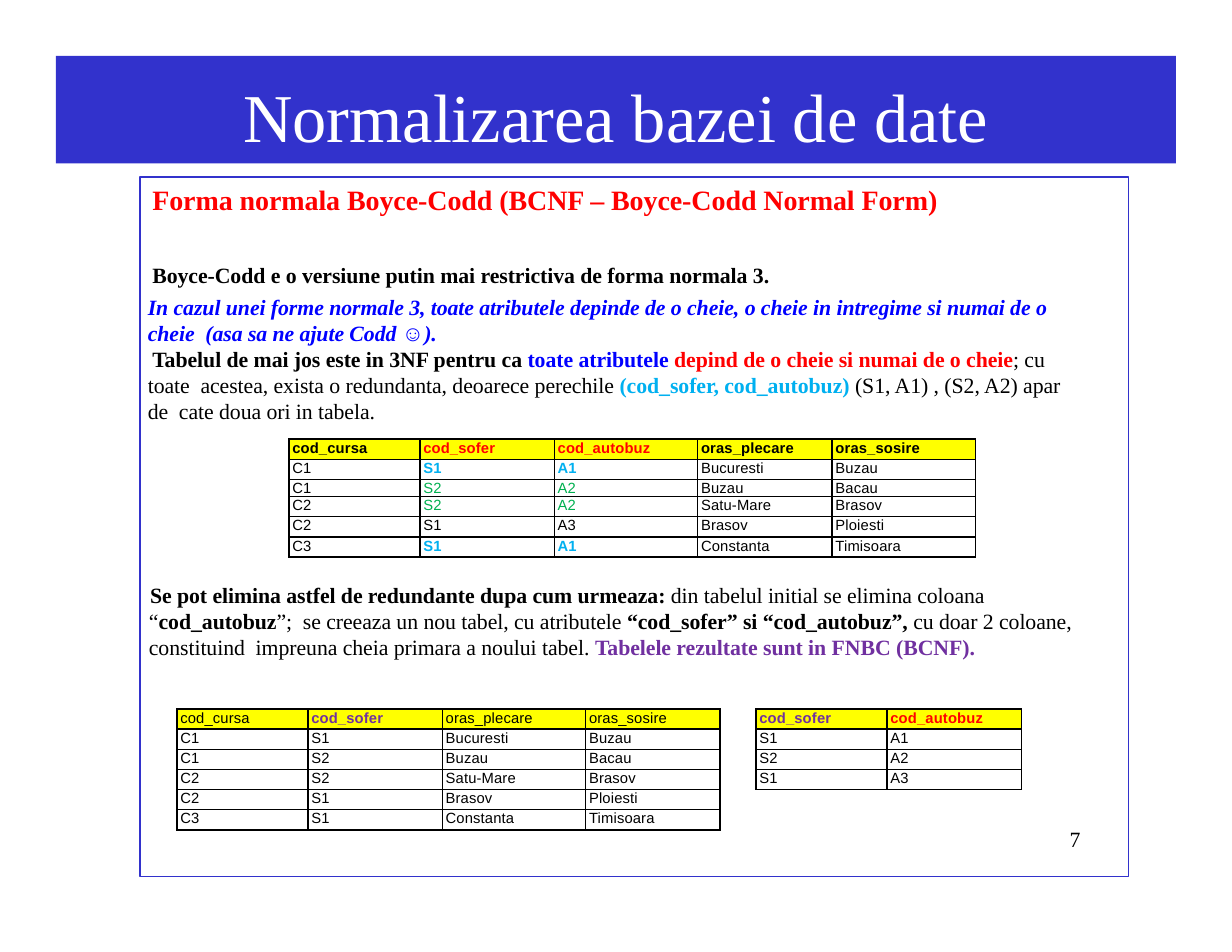
from dataclasses import dataclass
from typing import Optional

from lxml.etree import SubElement
from pptx import Presentation
from pptx.dml.color import RGBColor
from pptx.enum.shapes import MSO_SHAPE
from pptx.enum.text import PP_ALIGN
from pptx.oxml.ns import qn
from pptx.util import Inches, Pt

COLORS = {
    "black": "000000", "white": "FFFFFF", "banner": "3232CC", "yellow": "FFFF00",
    "red": "FF0000", "blue": "0000FF", "cyan": "00B0F0", "green": "00B050",
    "purple": "7030A0",
}
SERIF, SANS = "Times New Roman", "Arial"
COLUMN_WIDTHS = {"cod_cursa": 1.17, "cod_sofer": 1.2, "cod_autobuz": 1.28,
                 "oras_plecare": 1.2, "oras_sosire": 1.28}
ROW_HEIGHT = 0.18


@dataclass(frozen=True)
class Run:
    text: str
    color: str = "black"
    bold: bool = False
    italic: bool = False
    size: float = 14
    font: str = SERIF
    tracking: float = -0.05


@dataclass(frozen=True)
class Para:
    runs: tuple[Run, ...]
    before: float = 0
    spacing: Optional[float] = None
    margin: float = 0
    indent: float = 0
    align: PP_ALIGN = PP_ALIGN.LEFT


@dataclass(frozen=True)
class Cell:
    text: str
    color: str = "black"
    bold: bool = False


@dataclass(frozen=True)
class Grid:
    left: float
    top: float
    widths: tuple[float, ...]
    heights: tuple[float, ...]
    rows: tuple[tuple[Cell, ...], ...]


def rgb(name: str) -> RGBColor:
    return RGBColor.from_string(COLORS[name])


def write_paragraph(paragraph, para: Para) -> None:
    paragraph.alignment = para.align
    paragraph.space_before = Pt(para.before)
    if para.spacing:
        paragraph.line_spacing = Pt(para.spacing)
    properties = paragraph._p.get_or_add_pPr()
    properties.set("marL", str(Inches(para.margin)))
    properties.set("indent", str(Inches(para.indent)))
    for part in para.runs:
        run = paragraph.add_run()
        run.text = part.text
        font = run.font
        font.name, font.size = part.font, Pt(part.size)
        font.bold, font.italic = part.bold, part.italic
        font.color.rgb = rgb(part.color)
        font._element.set("spc", str(round(part.tracking * 100)))


def write_text(frame, paras: tuple[Para, ...], top_inset: float = 0) -> None:
    frame.word_wrap = True
    frame.margin_left = frame.margin_right = frame.margin_bottom = 0
    frame.margin_top = Inches(top_inset)
    for number, para in enumerate(paras):
        paragraph = frame.add_paragraph() if number else frame.paragraphs[0]
        write_paragraph(paragraph, para)


def add_text(slide, box: tuple[float, ...], paras: tuple[Para, ...], top_inset: float = 0) -> None:
    write_text(slide.shapes.add_textbox(*map(Inches, box)).text_frame, paras, top_inset)


def add_rectangle(slide, box: tuple[float, ...]):
    rectangle = slide.shapes.add_shape(MSO_SHAPE.RECTANGLE, *map(Inches, box))
    rectangle.shadow.inherit = False
    return rectangle


def add_borders(cell) -> None:
    """Put a 1 pt black line on all four sides, ahead of the cell's fill."""
    properties = cell._tc.get_or_add_tcPr()
    for position, side in enumerate(("lnL", "lnR", "lnT", "lnB")):
        line = SubElement(properties, qn(f"a:{side}"), w=str(Pt(1)))
        fill = SubElement(line, qn("a:solidFill"))
        SubElement(fill, qn("a:srgbClr"), val=COLORS["black"])
        properties.insert(position, line)


def add_grid(slide, grid: Grid) -> None:
    table = slide.shapes.add_table(
        len(grid.rows), len(grid.widths), Inches(grid.left), Inches(grid.top),
        Inches(sum(grid.widths)), Inches(sum(grid.heights))).table
    table.first_row = table.horz_banding = False
    for column, width in zip(table.columns, grid.widths):
        column.width = Inches(width)
    for number, (row, height, contents) in enumerate(zip(table.rows, grid.heights, grid.rows)):
        row.height = Inches(height)
        for cell, content in zip(row.cells, contents):
            cell.margin_left = cell.margin_right = cell.margin_top = cell.margin_bottom = 0
            if number == 0:
                cell.fill.solid()
                cell.fill.fore_color.rgb = rgb("yellow")
            else:
                cell.fill.background()
            add_borders(cell)
            run = Run(content.text, content.color, content.bold,
                      size=9.5, font=SANS, tracking=0.1)
            write_paragraph(cell.text_frame.paragraphs[0],
                            Para((run,), spacing=11.1, margin=0.03))


def plain(*texts: str) -> tuple[Cell, ...]:
    return tuple(Cell(text) for text in texts)


TRIPS = (
    ("C1", "S1", "A1", "Bucuresti", "Buzau"),
    ("C1", "S2", "A2", "Buzau", "Bacau"),
    ("C2", "S2", "A2", "Satu-Mare", "Brasov"),
    ("C2", "S1", "A3", "Brasov", "Ploiesti"),
    ("C3", "S1", "A1", "Constanta", "Timisoara"),
)
REPEATED_PAIRS = {("S1", "A1"): ("cyan", True), ("S2", "A2"): ("green", False)}


def trip_row(trip: tuple[str, ...]) -> tuple[Cell, ...]:
    """Colour the driver and bus of a trip when the pair occurs twice."""
    course, driver, bus, *cities = trip
    style = REPEATED_PAIRS.get((driver, bus), ("black", False))
    return (Cell(course), Cell(driver, *style), Cell(bus, *style), *plain(*cities))


WIDTHS = tuple(COLUMN_WIDTHS.values())
BUS_HEADER = Cell("cod_autobuz", "red", True)
KEY_HEADER = Cell("cod_sofer", "purple", True)
INITIAL = Grid(2.58, 3.92, WIDTHS, tuple(0.15 if n == 2 else ROW_HEIGHT for n in range(6)), (
    (Cell("cod_cursa", bold=True), Cell("cod_sofer", "red", True), BUS_HEADER,
     Cell("oras_plecare", bold=True), Cell("oras_sosire", bold=True)),
    *map(trip_row, TRIPS)))
WITHOUT_BUS = Grid(1.58, 6.33, (1.17, 1.2, 1.28, 1.2), (ROW_HEIGHT,) * 6, (
    (Cell("cod_cursa"), KEY_HEADER, *plain("oras_plecare", "oras_sosire")),
    *(plain(*trip[:2], *trip[3:]) for trip in TRIPS)))
DRIVER_BUS = Grid(6.75, 6.33, (1.17, 1.2), (ROW_HEIGHT,) * 4, (
    (KEY_HEADER, BUS_HEADER),
    *(plain(*pair) for pair in dict.fromkeys(trip[1:3] for trip in TRIPS))))

TITLE = Para((Run("Normalizarea bazei de date", "white", size=44),),
             before=6.6, align=PP_ALIGN.CENTER)
EXPLANATION = (
    Para((Run("Forma normala Boyce-Codd (BCNF – Boyce-Codd Normal Form)", "red", True, size=18),),
         before=0.9, margin=0.04),
    Para((Run("Boyce-Codd e o versiune putin mai restrictiva de forma normala 3.", bold=True),),
         before=29, margin=0.04),
    Para((Run("In cazul unei forme normale 3, toate atributele depinde de o cheie, o cheie in "
              "intregime si numai de o cheie  (asa sa ne ajute Codd ", "blue", True, True),
          Run("☺", "blue", True, True, font=SANS, tracking=-0.9),
          Run(").", "blue", True, True)), before=4, spacing=16.7),
    Para((Run("Tabelul de mai jos este in 3NF pentru ca ", bold=True),
          Run("toate atributele ", "blue", True),
          Run("depind de o cheie si numai de o cheie", "red", True),
          Run("; cu toate  acestea, exista o redundanta, deoarece perechile "),
          Run("(cod_sofer, cod_autobuz) ", "cyan", True),
          Run("(S1, A1) , (S2, A2) apar de  cate doua ori in tabela.")), indent=0.04),
)
SOLUTION = Para((
    Run("Se pot elimina astfel de redundante dupa cum urmeaza: ", bold=True),
    Run("din tabelul initial se elimina coloana “"),
    Run("cod_autobuz", bold=True),
    Run("”;  se creeaza un nou tabel, cu atributele "),
    Run("“cod_sofer” si “cod_autobuz”, ", bold=True),
    Run("cu doar 2 coloane, constituind  impreuna cheia primara a noului tabel. "),
    Run("Tabelele rezultate sunt in FNBC (BCNF).", "purple", True)), before=1.1, indent=0.01)
PAGE_NUMBER = Para((Run("7", tracking=0),), spacing=14.4, margin=0.04)


def main() -> None:
    presentation = Presentation()
    presentation.slide_width, presentation.slide_height = Inches(11), Inches(8.5)
    slide = presentation.slides.add_slide(presentation.slide_layouts[6])

    banner = add_rectangle(slide, (0.5, 0.5, 10, 0.96))
    banner.fill.solid()
    banner.fill.fore_color.rgb = rgb("banner")
    banner.line.fill.background()
    write_text(banner.text_frame, (TITLE,), 0.09)

    border = add_rectangle(slide, (1.25, 1.58, 8.83, 6.25))
    border.fill.background()
    border.line.color.rgb = rgb("banner")
    border.line.width = Pt(0.72)

    add_text(slide, (1.32, 1.62, 8.27, 2.18), EXPLANATION, 0.01)
    add_text(slide, (9.51, 7.41, 0.18, 0.22), (PAGE_NUMBER,))
    add_text(slide, (1.33, 5.17, 8.4, 0.73), (SOLUTION,), 0.02)
    for grid in (INITIAL, WITHOUT_BUS, DRIVER_BUS):
        add_grid(slide, grid)
    presentation.save("out.pptx")


if __name__ == "__main__":
    main()
